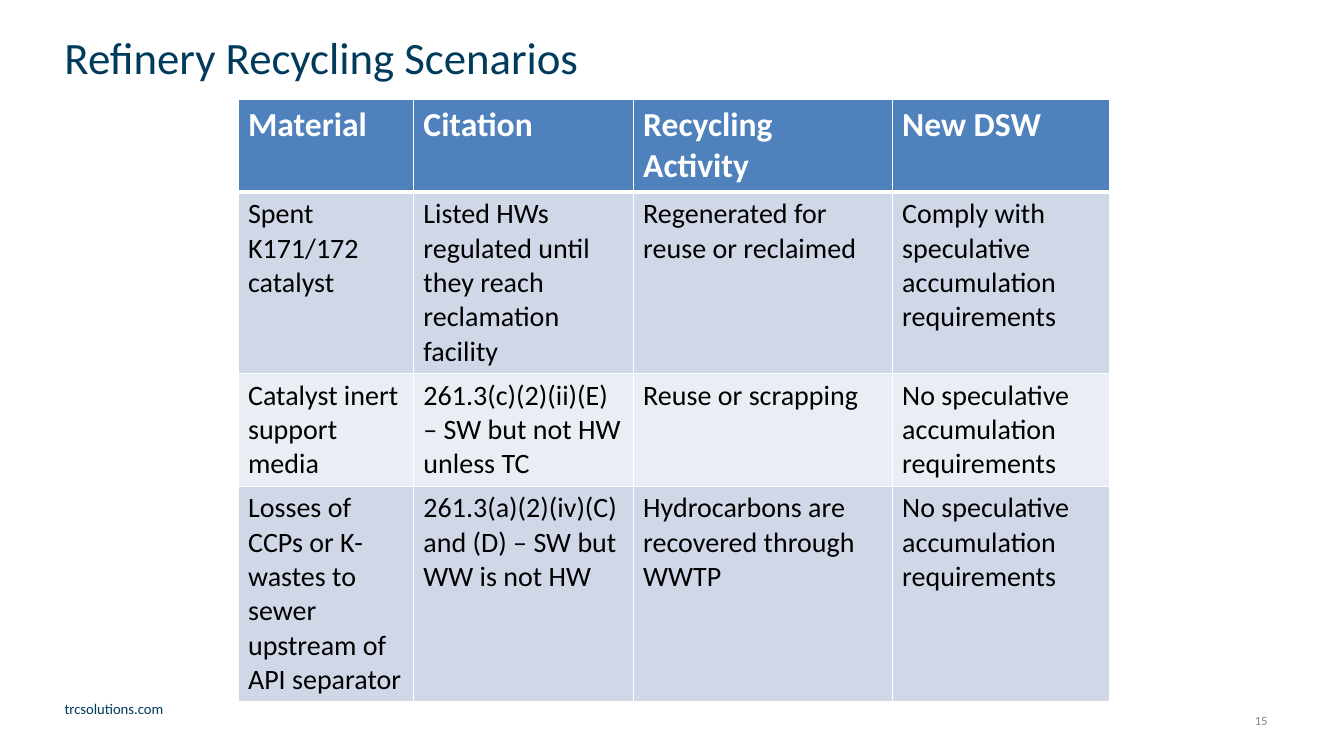
from lxml.etree import SubElement
from pptx import Presentation
from pptx.dml.color import RGBColor
from pptx.enum.text import MSO_ANCHOR, PP_ALIGN
from pptx.oxml.ns import qn
from pptx.util import Pt

NAVY = RGBColor(0x00, 0x3B, 0x5C)
GREY = RGBColor(0x89, 0x89, 0x89)
WHITE = RGBColor(0xFF, 0xFF, 0xFF)
BLACK = RGBColor(0x00, 0x00, 0x00)
HEADER = RGBColor(0x4F, 0x81, 0xBD)
BAND_DARK = RGBColor(0xD0, 0xD8, 0xE8)
BAND_LIGHT = RGBColor(0xE9, 0xED, 0xF4)

SCENARIOS = [
    ["Material", "Citation", "Recycling Activity", "New DSW"],
    ["Spent K171/172 catalyst",
     "Listed HWs regulated until they reach reclamation facility",
     "Regenerated for reuse or reclaimed",
     "Comply with speculative accumulation requirements"],
    ["Catalyst inert support media",
     "261.3(c)(2)(ii)(E) – SW but not HW unless TC",
     "Reuse or scrapping",
     "No speculative accumulation requirements"],
    ["Losses of CCPs or K-wastes to sewer upstream of API separator",
     "261.3(a)(2)(iv)(C) and (D) – SW but WW is not HW",
     "Hydrocarbons are recovered through WWTP",
     "No speculative accumulation requirements"],
]
COL_WIDTHS = [125.3, 157, 185, 155.5]
ROW_HEIGHTS = [66, 129.5, 80.5, 154]


class SlideBuilder:
    font = "Calibri"

    def __init__(self, slide):
        self.s = slide

    def style(self, p, size, color, bold=False):
        for r in p.runs:
            r.font.name = self.font
            r.font.size = Pt(size)
            r.font.bold = bold
            r.font.color.rgb = color

    def text(self, text, left, top, width, height, size, color,
             align=PP_ALIGN.LEFT, anchor=MSO_ANCHOR.TOP):
        sp = self.s.shapes.add_textbox(Pt(left), Pt(top), Pt(width), Pt(height))
        tf = sp.text_frame
        tf.word_wrap = True
        tf.vertical_anchor = anchor
        tf.text = text
        p = tf.paragraphs[0]
        p.alignment = align
        self.style(p, size, color)

    def borders(self, cell, bottom):
        tcPr = cell._tc.get_or_add_tcPr()
        for i, (side, width) in enumerate(
                [("lnL", 1), ("lnR", 1), ("lnT", 1), ("lnB", bottom)]):
            ln = SubElement(tcPr, qn(f"a:{side}"), w=str(Pt(width)))
            tcPr.insert(i, ln)
            fill = SubElement(ln, qn("a:solidFill"))
            SubElement(fill, qn("a:srgbClr"), val=str(WHITE))

    def table(self, rows, left, top, widths, heights):
        sp = self.s.shapes.add_table(len(rows), len(widths), Pt(left), Pt(top),
                                     Pt(sum(widths)), Pt(sum(heights)))
        table = sp.table
        for col, width in zip(table.columns, widths):
            col.width = Pt(width)
        for i, (row, height) in enumerate(zip(rows, heights)):
            table.rows[i].height = Pt(height)
            header = i == 0
            band = HEADER if header else BAND_DARK if i % 2 else BAND_LIGHT
            for j, text in enumerate(row):
                cell = table.cell(i, j)
                cell.text_frame.text = text
                cell.fill.solid()
                cell.fill.fore_color.rgb = band
                self.borders(cell, 3 if header else 1)
                self.style(cell.text_frame.paragraphs[0],
                           24 if header else 20,
                           WHITE if header else BLACK, header)


def main():
    prs = Presentation()
    prs.slide_width, prs.slide_height = Pt(960), Pt(540)
    s = SlideBuilder(prs.slides.add_slide(prs.slide_layouts[6]))
    s.text("trcsolutions.com", 39, 496, 159, 20, 10.5, NAVY)
    s.text("15", 688.5, 500.5, 224, 28.8, 9, GREY,
           PP_ALIGN.RIGHT, MSO_ANCHOR.MIDDLE)
    s.text("Refinery Recycling Scenarios", 39, 18, 747.5, 53.3, 32, NAVY)
    s.table(SCENARIOS, 170, 71.3, COL_WIDTHS, ROW_HEIGHTS)
    prs.save("out.pptx")


if __name__ == "__main__":
    main()
